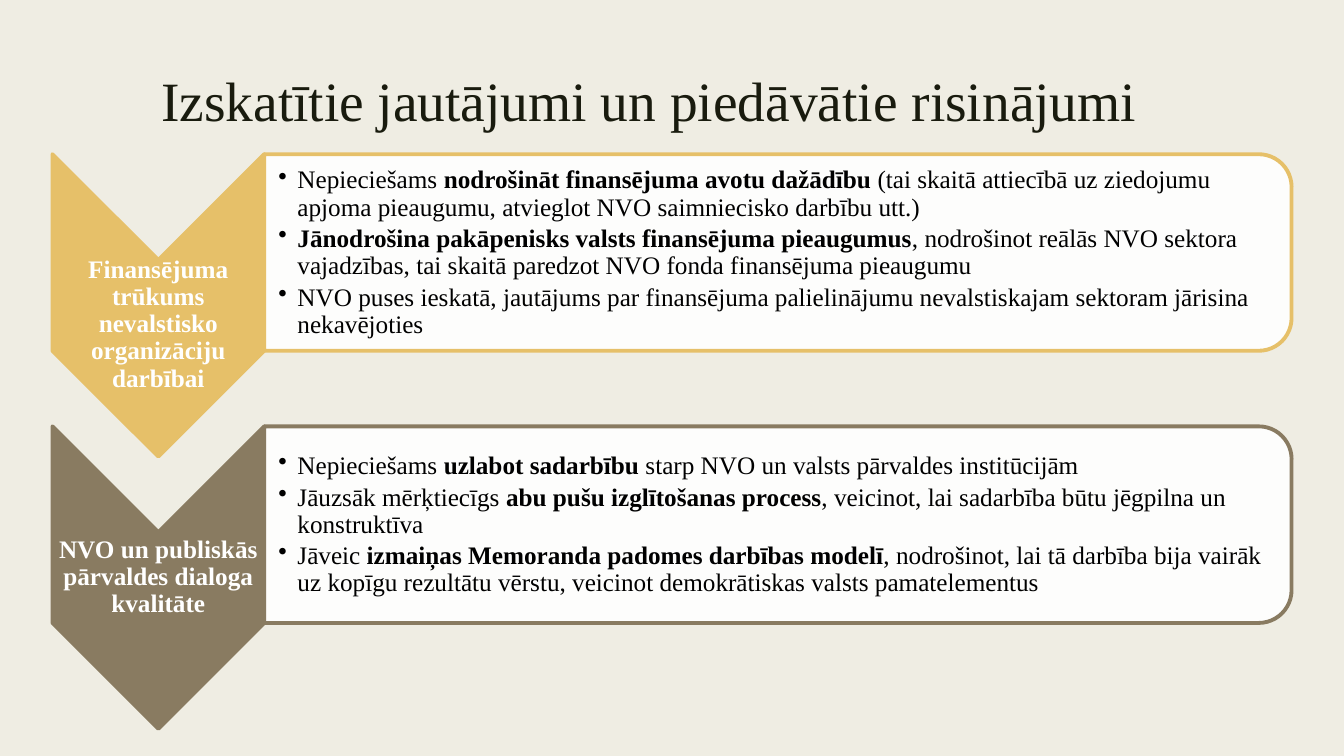
from dataclasses import dataclass

from lxml.etree import SubElement
from pptx import Presentation
from pptx.dml.color import RGBColor
from pptx.enum.shapes import MSO_SHAPE
from pptx.enum.text import MSO_ANCHOR, PP_ALIGN
from pptx.oxml.ns import qn
from pptx.shapes.autoshape import Shape
from pptx.slide import Slide
from pptx.text.text import TextFrame, _Paragraph
from pptx.util import Inches, Pt


@dataclass(frozen=True)
class Theme:
    font: str = "Times New Roman"
    background: str = "EFEDE3"
    title: str = "191B0E"
    white: str = "FFFFFF"
    black: str = "000000"
    gold: str = "E6C069"
    brown: str = "897B61"
    title_size: float = 39.6
    body_size: float = 18
    outline: float = 2.75


@dataclass(frozen=True)
class Box:
    left: float
    top: float
    width: float
    height: float


@dataclass(frozen=True)
class Issue:
    """A topic and its solutions; odd runs of each solution are bold."""
    label: str
    label_drop: float
    color: str
    solutions: tuple[tuple[str, ...], ...]


THEME = Theme()
ROW_STEP = 2.7
ISSUES = (
    Issue("Finansējuma trūkums nevalstisko organizāciju darbībai", 0.19, THEME.gold, (
        ("Nepieciešams ", "nodrošināt finansējuma avotu dažādību ",
         "(tai skaitā attiecībā uz ziedojumu apjoma pieaugumu, "
         "atvieglot NVO saimniecisko darbību utt.)"),
        ("", "Jānodrošina pakāpenisks valsts finansējuma pieaugumus",
         ", nodrošinot reālās NVO sektora vajadzības, "
         "tai skaitā paredzot NVO fonda finansējuma pieaugumu"),
        ("NVO puses ieskatā, jautājums par finansējuma palielinājumu "
         "nevalstiskajam sektoram jārisina nekavējoties",),
    )),
    Issue("NVO un publiskās pārvaldes dialoga kvalitāte", 0, THEME.brown, (
        ("Nepieciešams ", "uzlabot sadarbību ",
         "starp NVO un valsts pārvaldes institūcijām"),
        ("Jāuzsāk mērķtiecīgs ", "abu pušu izglītošanas process",
         ", veicinot, lai sadarbība būtu jēgpilna un konstruktīva"),
        ("Jāveic ", "izmaiņas Memoranda padomes darbības modelī",
         ", nodrošinot, lai tā darbība bija vairāk uz kopīgu rezultātu vērstu, "
         "veicinot demokrātiskas valsts pamatelementus"),
    )),
)


def add_run(p: _Paragraph, text: str, size: float, color: str, bold: bool = False) -> None:
    r = p.add_run()
    r.text = text
    r.font.name = THEME.font
    r.font.size = Pt(size)
    r.font.bold = bold
    r.font.color.rgb = RGBColor.from_string(color)


def add_text_frame(slide: Slide, box: Box, anchor: MSO_ANCHOR) -> TextFrame:
    tf = slide.shapes.add_textbox(Inches(box.left), Inches(box.top),
                                  Inches(box.width), Inches(box.height)).text_frame
    tf.word_wrap = True
    tf.vertical_anchor = anchor
    return tf


def set_margins(tf: TextFrame, left: float = 0.01) -> None:
    tf.margin_left = Inches(left)
    tf.margin_top = tf.margin_right = tf.margin_bottom = Inches(0.01)


def add_turned_shape(slide: Slide, kind: MSO_SHAPE, box: Box, fill: str, line: str) -> Shape:
    """Add a shape turned a quarter clockwise; box is its place before turning."""
    sp = slide.shapes.add_shape(kind, Inches(box.left), Inches(box.top),
                                Inches(box.width), Inches(box.height))
    sp.rotation = 90
    sp.shadow.inherit = False
    sp.fill.solid()
    sp.fill.fore_color.rgb = RGBColor.from_string(fill)
    sp.line.color.rgb = RGBColor.from_string(line)
    sp.line.width = Pt(THEME.outline)
    return sp


def set_opacity(sp: Shape, percent: int) -> None:
    color = sp._element.spPr.find(qn("a:solidFill"))[0]
    SubElement(color, qn("a:alpha")).set("val", str(percent * 1000))


def make_bullet(p: _Paragraph) -> None:
    p.level = 1
    p.line_spacing = 0.9
    p.space_after = Pt(3)
    pPr = p._p.get_or_add_pPr()
    pPr.set("marL", str(Inches(0.19)))
    pPr.set("indent", str(-Inches(0.19)))
    SubElement(pPr, qn("a:buChar")).set("char", "•")


def add_title(slide: Slide) -> None:
    tf = add_text_frame(slide, Box(1.5, 0.75, 10.5, 0.6), MSO_ANCHOR.BOTTOM)
    p = tf.paragraphs[0]
    p.line_spacing = 0.69
    add_run(p, "Izskatītie jautājumi un piedāvātie risinājumi",
            THEME.title_size, THEME.title)


def add_issue(slide: Slide, issue: Issue, offset: float) -> None:
    add_turned_shape(slide, MSO_SHAPE.CHEVRON, Box(0.07, 1.98 + offset, 3, 2.1),
                     issue.color, issue.color)
    tf = add_text_frame(slide, Box(0.52, 2.58 + offset + issue.label_drop, 2.1, 0.9),
                        MSO_ANCHOR.MIDDLE)
    set_margins(tf)
    p = tf.paragraphs[0]
    p.alignment = PP_ALIGN.CENTER
    p.line_spacing = 0.9
    add_run(p, issue.label, THEME.body_size, THEME.white, bold=True)

    panel = add_turned_shape(slide, MSO_SHAPE.ROUND_2_SAME_RECTANGLE,
                             Box(6.74, -2.59 + offset, 1.95, 10.19),
                             THEME.white, issue.color)
    set_opacity(panel, 90)
    tf = add_text_frame(slide, Box(2.62, 1.63 + offset, 10.09, 1.76), MSO_ANCHOR.MIDDLE)
    set_margins(tf, left=0.14)
    for i, solution in enumerate(issue.solutions):
        p = tf.add_paragraph() if i else tf.paragraphs[0]
        make_bullet(p)
        for j, text in enumerate(solution):
            if text:
                add_run(p, text, THEME.body_size, THEME.black, bold=j % 2 == 1)


def main() -> None:
    prs = Presentation()
    prs.slide_width, prs.slide_height = Inches(13.33), Inches(7.5)
    slide = prs.slides.add_slide(prs.slide_layouts[6])
    slide.background.fill.solid()
    slide.background.fill.fore_color.rgb = RGBColor.from_string(THEME.background)
    add_title(slide)
    for row, issue in enumerate(ISSUES):
        add_issue(slide, issue, row * ROW_STEP)
    prs.save("out.pptx")


if __name__ == "__main__":
    main()
